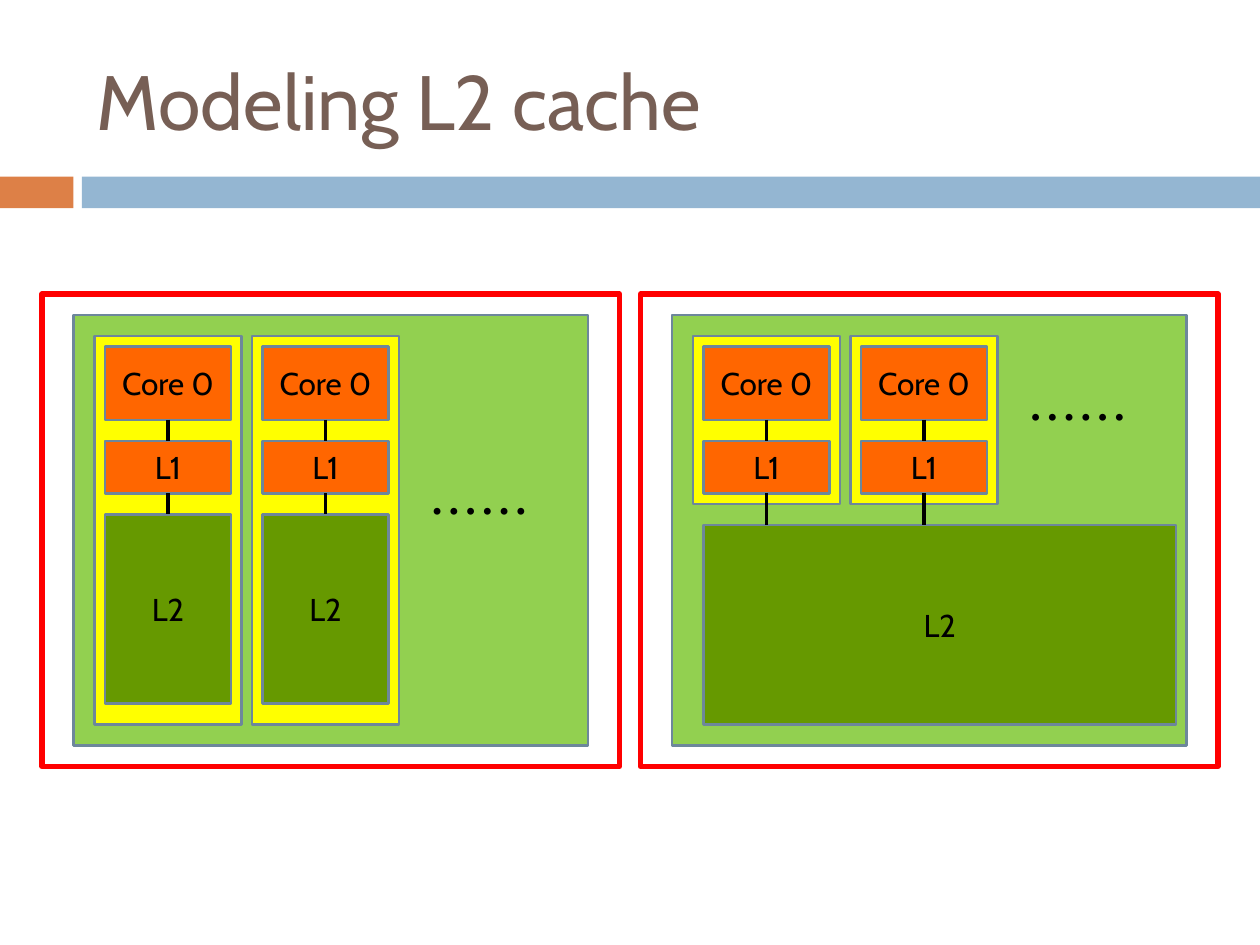
from lxml.etree import SubElement
from pptx import Presentation
from pptx.dml.color import RGBColor
from pptx.enum.shapes import MSO_CONNECTOR, MSO_SHAPE
from pptx.enum.text import MSO_ANCHOR, MSO_AUTO_SIZE, PP_ALIGN
from pptx.oxml.ns import qn
from pptx.util import Cm, Pt

FONT = "Cabin"
BLACK = RGBColor(0x00, 0x00, 0x00)
BROWN = RGBColor(0x77, 0x5F, 0x55)
ACCENT = RGBColor(0xDD, 0x80, 0x47)
BLUE = RGBColor(0x94, 0xB6, 0xD2)
SLATE = RGBColor(0x6D, 0x87, 0x9B)
CHIP = RGBColor(0x92, 0xD0, 0x50)
YELLOW = RGBColor(0xFF, 0xFF, 0x00)
ORANGE = RGBColor(0xFF, 0x66, 0x00)
GREEN = RGBColor(0x66, 0x99, 0x00)
RED = RGBColor(0xFF, 0x00, 0x00)

U = Cm(2.54) / 12  # diagram grid step
COLUMN_STEP = 15   # grid steps from one core column to the next


def grid(*steps):
    return [round(n * U) for n in steps]


def set_font(p, size, color):
    p.font.name, p.font.size, p.font.color.rgb = FONT, Pt(size), color


def add_rect(s, box, fill=None, line=None, width=1.5, text=None):
    sp = s.shapes.add_shape(MSO_SHAPE.RECTANGLE, *box)
    sp.shadow.inherit = False
    if fill is None:
        sp.fill.background()
    else:
        sp.fill.solid()
        sp.fill.fore_color.rgb = fill
    if line is None:
        sp.line.fill.background()
    else:
        sp.line.color.rgb, sp.line.width = line, Pt(width)
    if text:
        sp.text_frame.vertical_anchor = MSO_ANCHOR.MIDDLE
        p = sp.text_frame.paragraphs[0]
        p.text, p.alignment = text, PP_ALIGN.CENTER
        set_font(p, 18, BLACK)
    return sp


def add_link(s, upper, lower):
    """Drop a line from the middle of upper's bottom to lower's top edge."""
    x = upper.left + upper.width // 2
    line = s.shapes.add_connector(MSO_CONNECTOR.STRAIGHT, x,
                                  upper.top + upper.height, x, lower.top)
    line.begin_connect(upper, 2)
    if lower.left + lower.width // 2 == x:
        line.end_connect(lower, 0)
    line.line.color.rgb, line.line.width = BLACK, Pt(2)
    SubElement(line._element.spPr, qn("a:effectLst"))


def add_dots(s, x, y):
    tf = s.shapes.add_textbox(*grid(x, y, 14, 4.8)).text_frame
    tf.word_wrap = True
    tf.auto_size = MSO_AUTO_SIZE.SHAPE_TO_FIT_TEXT
    p = tf.paragraphs[0]
    p.text = "• • • • • •"
    set_font(p, 18, BLACK)


def add_core(s, x, y, height):
    """Yellow column with a core linked to its L1; returns the L1."""
    add_rect(s, grid(x, y, 14, height), YELLOW, SLATE)
    core = add_rect(s, grid(x + 1, y + 1, 12, 7), ORANGE, SLATE, text="Core 0")
    l1 = add_rect(s, grid(x + 1, y + 10, 12, 5), ORANGE, SLATE, text="L1")
    add_link(s, core, l1)
    return l1


def add_chip(s, x, y, shared):
    """Framed chip whose cores have private L2 caches or one shared L2."""
    add_rect(s, grid(x + 3, y + 2, 49, 41), CHIP, SLATE)
    columns = [x + 5 + i * COLUMN_STEP for i in range(2)]
    top = y + 4
    l1s = [add_core(s, cx, top, 16 if shared else 37) for cx in columns]
    if shared:
        l2s = [add_rect(s, grid(x + 6, y + 22, 45, 19), GREEN, SLATE,
                        text="L2")] * len(l1s)
    else:
        l2s = [add_rect(s, grid(cx + 1, top + 17, 12, 18), GREEN, SLATE,
                        text="L2") for cx in columns]
    for l1, l2 in zip(l1s, l2s):
        add_link(s, l1, l2)
    add_dots(s, x + 36, y + (9 if shared else 18))
    # Red frame
    add_rect(s, grid(x, y, 55, 45), line=RED, width=3)


def add_header(s, left, top, width, height):
    # Title
    title = s.shapes.title
    title.left, title.top = left + Cm(1.7), top + Cm(0.64)
    title.width, title.height = Cm(22.66), Cm(2.74)
    tf = title.text_frame
    tf.word_wrap = True
    tf.vertical_anchor = MSO_ANCHOR.MIDDLE
    p = tf.paragraphs[0]
    p.text, p.alignment = "Modeling L2 cache", PP_ALIGN.LEFT
    set_font(p, 44, BROWN)
    # Two-colour band along the bottom
    band, start = Cm(0.64), Cm(1.65)
    y = top + height - band
    add_rect(s, (left, y, Cm(1.48), band), ACCENT)
    add_rect(s, (left + start, y, width - start, band), BLUE)


def main():
    prs = Presentation()
    prs.slide_width, prs.slide_height = Cm(25.4), Cm(19.05)
    s = prs.slides.add_slide(prs.slide_layouts[5])
    add_header(s, 0, 0, prs.slide_width, Cm(4.2))
    add_chip(s, 4, 28, shared=False)
    add_chip(s, 61, 28, shared=True)
    prs.save("out.pptx")


if __name__ == "__main__":
    main()
